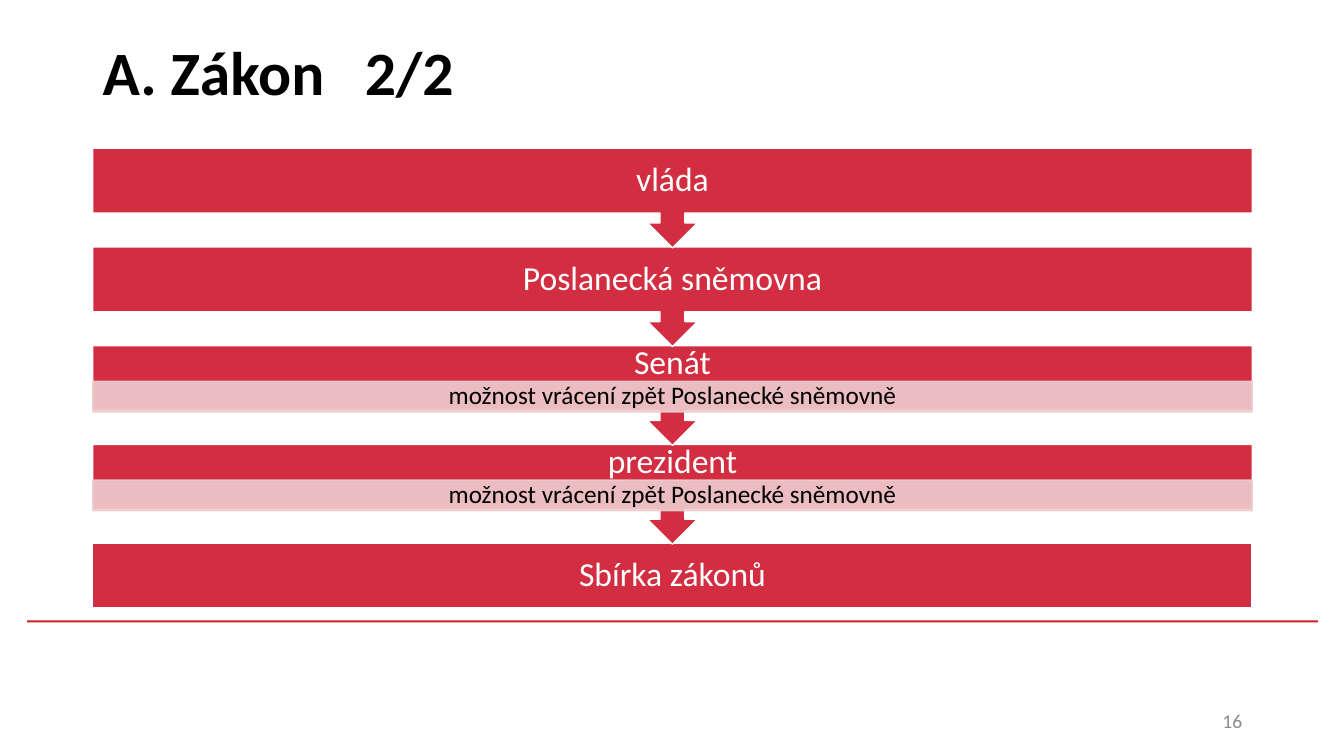
from dataclasses import dataclass

from lxml.etree import SubElement
from pptx import Presentation
from pptx.dml.color import RGBColor
from pptx.enum.shapes import MSO_SHAPE as SHAPE
from pptx.enum.text import MSO_ANCHOR as ANCHOR, PP_ALIGN as ALIGN
from pptx.oxml.ns import qn
from pptx.util import Inches, Pt


@dataclass(frozen=True)
class Theme:
    font: str = "Calibri"
    red: str = "D22D40"
    rule: str = "CD1F21"
    pink: str = "EECDCF"
    white: str = "FFFFFF"
    black: str = "000000"
    grey: str = "8C8C8C"
    title: int = 44
    step: int = 24
    note: int = 18
    page: int = 14


class Deck:
    """Places styled elements on a grid of 12 columns and rows one step high."""

    left, top, col, row = 0.92, 1.47, 11.5 / 12, 0.98

    def __init__(self, prs, theme):
        self.t = theme
        self.s = prs.slides.add_slide(prs.slide_layouts[6])

    def place(self, x, y, w, h):
        return [Inches(v) for v in (self.left + x * self.col, self.top + y * self.row,
                                    w * self.col, h * self.row)]

    def label(self, sp, text, size, color, align=ALIGN.CENTER, bold=False, spacing=0.9,
              insets=(0.1, 0.05, 0.1, 0.05), tab=None):
        tf = sp.text_frame
        tf.word_wrap = True
        tf.vertical_anchor = ANCHOR.MIDDLE
        tf.margin_left, tf.margin_top, tf.margin_right, tf.margin_bottom = map(Inches, insets)
        p = tf.paragraphs[0]
        if tab:
            tabs = SubElement(p._p.get_or_add_pPr(), qn("a:tabLst"))
            SubElement(tabs, qn("a:tab"), pos=str(Inches(tab)), algn="l")
        p.alignment = align
        p.line_spacing = spacing
        r = p.add_run()
        r.text = text
        r.font.name, r.font.size, r.font.bold = self.t.font, Pt(size), bold
        r.font.color.rgb = RGBColor.from_string(color)

    def text(self, text, x, y, w, h, **fmt):
        self.label(self.s.shapes.add_textbox(*self.place(x, y, w, h)), text, **fmt)

    def shape(self, kind, x, y, w, h, fill, line=None, alpha=None):
        sp = self.s.shapes.add_shape(kind, *self.place(x, y, w, h))
        sp.shadow.inherit = False
        sp.fill.solid()
        sp.fill.fore_color.rgb = RGBColor.from_string(fill)
        if line:
            sp.line.color.rgb = RGBColor.from_string(line)
            sp.line.width = Pt(1)
        else:
            sp.line.fill.background()
        if alpha:
            for clr in sp._element.spPr.iter(qn("a:srgbClr")):
                SubElement(clr, qn("a:alpha"), val=str(alpha * 1000))
        return sp

    def step(self, i, name, note=None, last=False):
        kind, h = (SHAPE.RECTANGLE, 0.65) if last else (SHAPE.DOWN_ARROW_CALLOUT, 1.01)
        sp = self.shape(kind, 0, i, 12, h, self.t.red, line=self.t.white)
        self.label(sp, name, self.t.step, self.t.white,
                   insets=(0.19, 0, 0.19, 0.29 if note else 0))
        if note:
            band = self.shape(SHAPE.RECTANGLE, 0, i + 0.36, 12, 0.31, self.t.pink,
                              line=self.t.pink, alpha=90)
            self.label(band, note, self.t.note, self.t.black, insets=(0.14, 0.03, 0.14, 0.03))


def main():
    prs = Presentation()
    prs.slide_width, prs.slide_height = Inches(13.33), Inches(7.5)
    t = Theme()
    deck = Deck(prs, t)
    deck.shape(SHAPE.RECTANGLE, -0.68, 4.78, 13.36, 0.02, t.rule)
    deck.text("A. Zákon\t2/2", 0, -1.48, 12, 1.48, size=t.title, color=t.black,
              align=ALIGN.LEFT, bold=True, tab=2.6)
    deck.text("16", 8.87, 5.59, 3.13, 0.41, size=t.page, color=t.grey,
              align=ALIGN.RIGHT, spacing=1.0)
    note = "možnost vrácení zpět Poslanecké sněmovně"
    steps = [("vláda", None), ("Poslanecká sněmovna", None), ("Senát", note),
             ("prezident", note), ("Sbírka zákonů", None)]
    for i, (name, remark) in reversed(list(enumerate(steps))):
        deck.step(i, name, remark, last=i == len(steps) - 1)
    prs.save("out.pptx")


if __name__ == "__main__":
    main()
